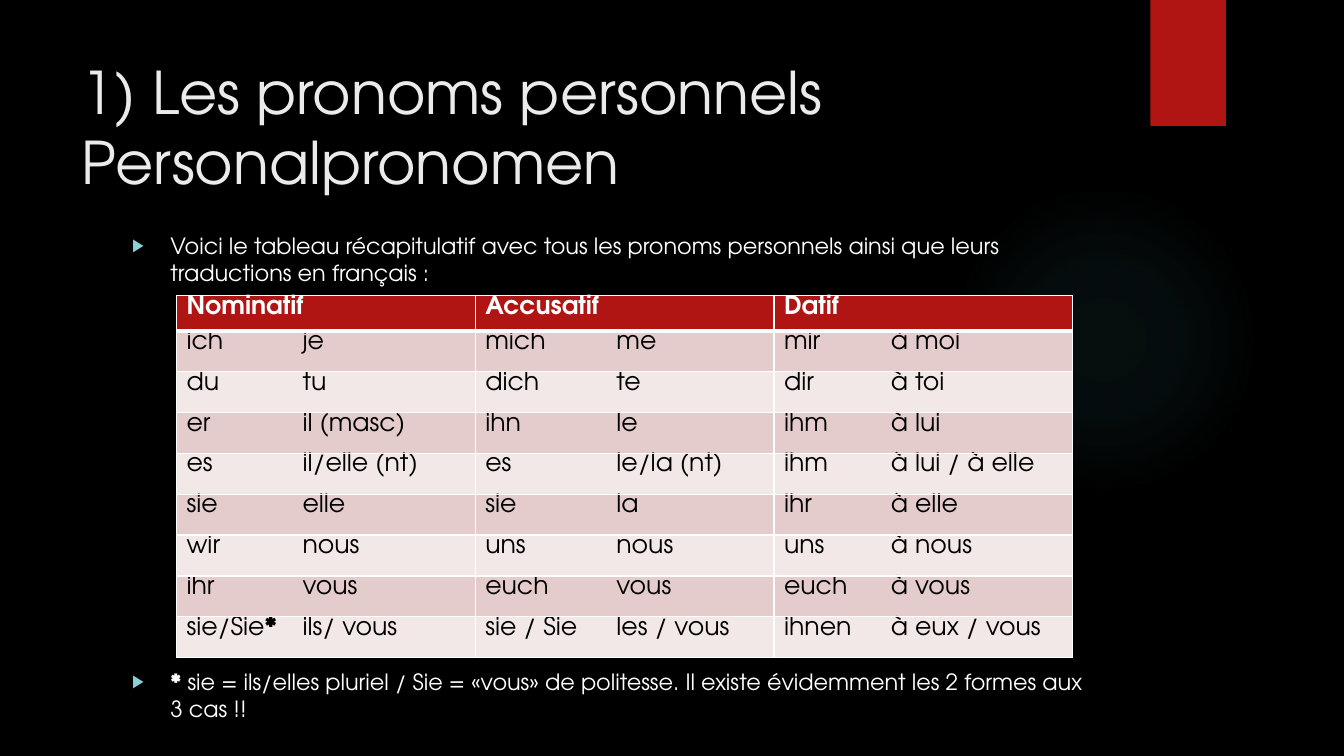
from dataclasses import dataclass
from itertools import groupby
from typing import NamedTuple

from lxml.etree import SubElement
from pptx import Presentation
from pptx.dml.color import RGBColor
from pptx.enum.shapes import MSO_SHAPE
from pptx.enum.text import MSO_ANCHOR, MSO_AUTO_SIZE, PP_ALIGN
from pptx.oxml import parse_xml
from pptx.oxml.ns import nsdecls, qn
from pptx.util import Inches, Pt

HUES = {
    "back": "000000", "red": "B01513", "glow": "50B9C1", "title": "EBEBEB",
    "white": "FFFFFF", "ink": "000000", "mark": "8AD0D6",
    "odd": "E4CCCC", "even": "F2E8E7",
}
FACE = "TeX Gyre Adventor"
WIDE, HIGH = Inches(13.33), Inches(7.5)


class Box(NamedTuple):
    left: float
    top: float
    width: float
    height: float

    def place(self) -> dict[str, int]:
        spans = (WIDE, HIGH, WIDE, HIGH)
        return {key: round(span * share / 100)
                for key, span, share in zip(self._fields, spans, self)}


@dataclass(frozen=True)
class Look:
    size: float
    hue: str
    bold: bool = False


@dataclass(frozen=True)
class Case:
    head: str
    tab: float
    pairs: tuple[tuple[str, str], ...]


@dataclass(frozen=True)
class Shape:
    kind: MSO_SHAPE
    box: Box
    hue: str


GLOW = Shape(MSO_SHAPE.OVAL, Box(70.6, 24.4, 23.1, 41.07), "glow")
FLAG = Shape(MSO_SHAPE.RECTANGLE, Box(85.6, 0, 5.62, 16.67), "red")
TITLE = Box(5.33, 6.67, 77.2, 20.4)
BODY = Box(9.08, 30, 73.37, 68.13)
TABLE = Box(13.13, 39.07, 66.69, 48)

CASES = (
    Case("Nominatif", 1.15, (
        ("ich", "je"), ("du", "tu"), ("er", "il (masc)"), ("es", "il/elle (nt)"),
        ("sie", "elle"), ("wir", "nous"), ("ihr", "vous"), ("sie/Sie*", "ils/ vous"))),
    Case("Accusatif", 1.3, (
        ("mich", "me"), ("dich", "te"), ("ihn", "le"), ("es", "le/la (nt)"),
        ("sie", "la"), ("uns", "nous"), ("euch", "vous"), ("sie / Sie", "les / vous"))),
    Case("Datif", 1.06, (
        ("mir", "à moi"), ("dir", "à toi"), ("ihm", "à lui"), ("ihm", "à lui / à elle"),
        ("ihr", "à elle"), ("uns", "à nous"), ("euch", "à vous"), ("ihnen", "à eux / vous"))),
)
NOTES = (
    ("Voici le tableau récapitulatif avec tous les pronoms personnels "
     "ainsi que leurs traductions en français :", 0),
    ("* sie = ils/elles pluriel / Sie = «vous» de politesse. "
     "Il existe évidemment les 2 formes aux 3 cas !!", 273),
)


def tint(hue: str) -> RGBColor:
    return RGBColor.from_string(HUES[hue])


def apply(target, values: dict) -> None:
    for key, value in values.items():
        setattr(target, key, value)


def write(par, text: str, look: Look) -> None:
    for star, group in groupby(text, lambda sign: sign == "*"):
        run = par.add_run()
        run.text = "".join(group)
        apply(run.font, {"name": FACE, "size": Pt(look.size), "bold": look.bold or star})
        run.font.color.rgb = tint(look.hue)


def draw(slide, item: Shape, layer: int):
    shape = slide.shapes.add_shape(item.kind, *item.box.place().values())
    shape.shadow.inherit = False
    shape.fill.solid()
    shape.fill.fore_color.rgb = tint(item.hue)
    shape.line.fill.background()
    slide.shapes._spTree.insert(layer, shape._element)
    return shape


def fade(shape) -> None:
    stops = "".join(
        f'<a:gs pos="{pos * 1000}"><a:srgbClr val="{HUES["glow"]}">'
        f'<a:alpha val="{alpha * 1000}"/></a:srgbClr></a:gs>'
        for pos, alpha in ((0, 7), (36, 6), (69, 0)))
    grade = parse_xml(
        f'<a:gradFill {nsdecls("a")}><a:gsLst>{stops}</a:gsLst><a:path path="circle">'
        '<a:fillToRect l="50000" t="50000" r="50000" b="50000"/></a:path></a:gradFill>')
    props = shape._element.spPr
    props.replace(props.find(qn("a:solidFill")), grade)


def frame(holder, box: Box):
    apply(holder, box.place())
    text = holder.text_frame
    apply(text, {"word_wrap": True, "auto_size": MSO_AUTO_SIZE.NONE,
                 "vertical_anchor": MSO_ANCHOR.TOP})
    return text


def mark(par) -> None:
    props = par._p.get_or_add_pPr()
    props.set("marL", str(Inches(0.38)))
    props.set("indent", str(-Inches(0.38)))
    color = SubElement(props, qn("a:buClr"))
    SubElement(color, qn("a:srgbClr"), val=HUES["mark"])
    SubElement(props, qn("a:buSzPct"), val="80000")
    SubElement(props, qn("a:buChar"), char="▶")


def edge(cell, row: int) -> None:
    props = cell._tc.get_or_add_tcPr()
    widths = {"L": 1, "R": 1, "T": 3 if row == 1 else 1, "B": 3 if row == 0 else 1}
    for side, width in widths.items():
        line = SubElement(props, qn(f"a:ln{side}"), w=str(Pt(width)))
        fill = SubElement(line, qn("a:solidFill"))
        SubElement(fill, qn("a:srgbClr"), val=HUES["white"])


def fill_cell(cell, row: int, text: str, tab: float) -> None:
    edge(cell, row)
    cell.fill.solid()
    cell.fill.fore_color.rgb = tint("red" if row == 0 else "odd" if row % 2 else "even")
    apply(cell, {"margin_left": Inches(0.1), "margin_right": 0,
                 "margin_top": 0, "margin_bottom": 0})
    par = cell.text_frame.paragraphs[0]
    if row:
        tabs = SubElement(par._p.get_or_add_pPr(), qn("a:tabLst"))
        SubElement(tabs, qn("a:tab"), pos=str(Inches(tab)), algn="l")
    write(par, text, Look(18, "ink") if row else Look(18, "white", True))


def add_cases(slide) -> None:
    count = len(CASES[0].pairs) + 1
    table = slide.shapes.add_table(count, len(CASES), *TABLE.place().values()).table
    for row, line in enumerate(table.rows):
        line.height = Pt(29.2) if row else Inches(0.35)
    for col, case in enumerate(CASES):
        texts = [case.head, *("\t".join(pair) for pair in case.pairs)]
        for row, text in enumerate(texts):
            fill_cell(table.cell(row, col), row, text, case.tab)


def main() -> None:
    deck = Presentation()
    apply(deck, {"slide_width": WIDE, "slide_height": HIGH})
    slide = deck.slides.add_slide(deck.slide_layouts[1])
    slide.background.fill.solid()
    slide.background.fill.fore_color.rgb = tint("back")

    fade(draw(slide, GLOW, 2))
    draw(slide, FLAG, 3)

    par = frame(slide.shapes.title, TITLE).paragraphs[0]
    par.alignment = PP_ALIGN.LEFT
    write(par, "1) Les pronoms personnels", Look(42, "title"))
    par.add_line_break()
    write(par, "Personalpronomen", Look(42, "title"))

    body = frame(slide.placeholders[1], BODY)
    for spot, (text, gap) in enumerate(NOTES):
        par = body.add_paragraph() if spot else body.paragraphs[0]
        mark(par)
        par.space_before = Pt(gap)
        write(par, text, Look(16, "white"))

    add_cases(slide)
    deck.save("out.pptx")


if __name__ == "__main__":
    main()
